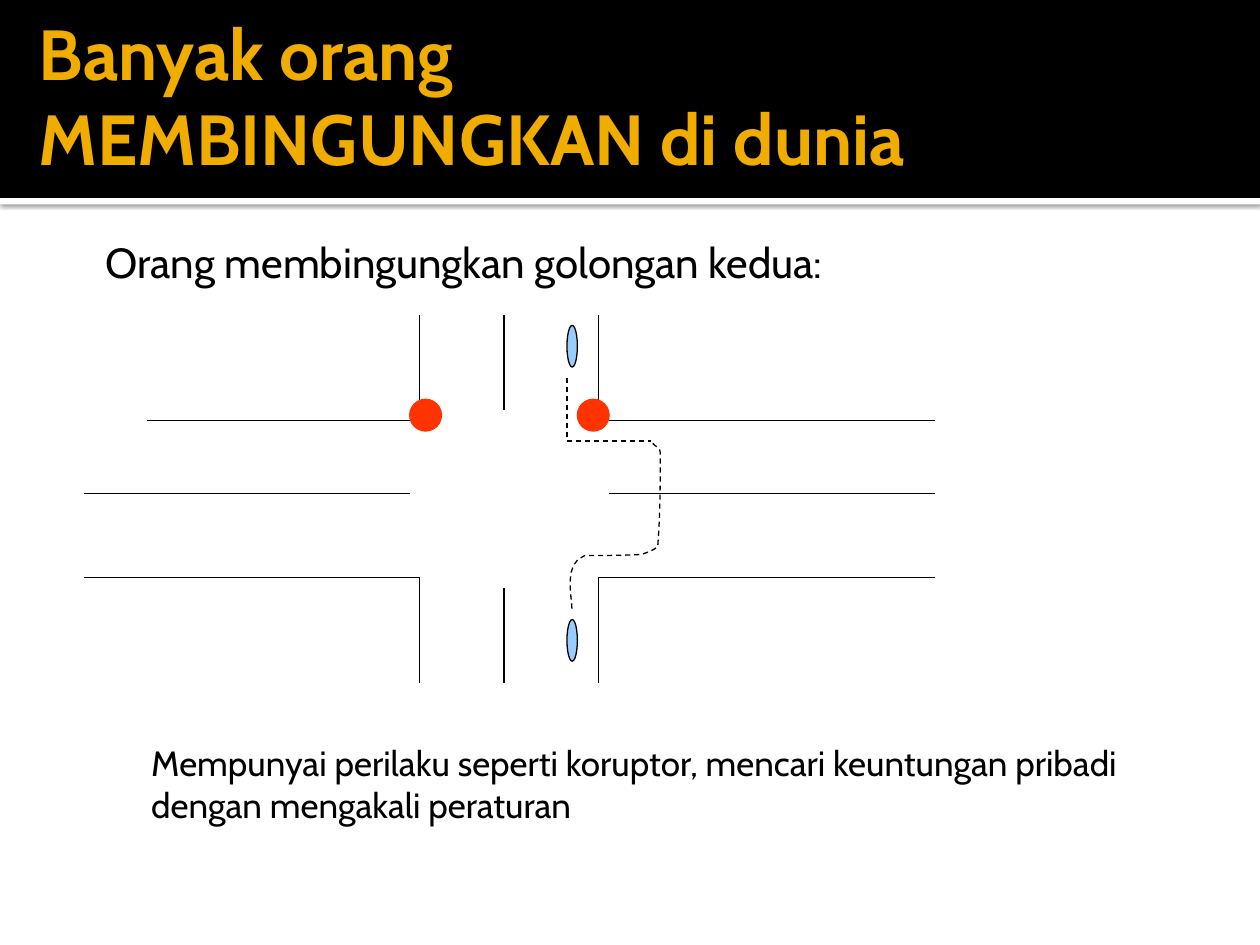
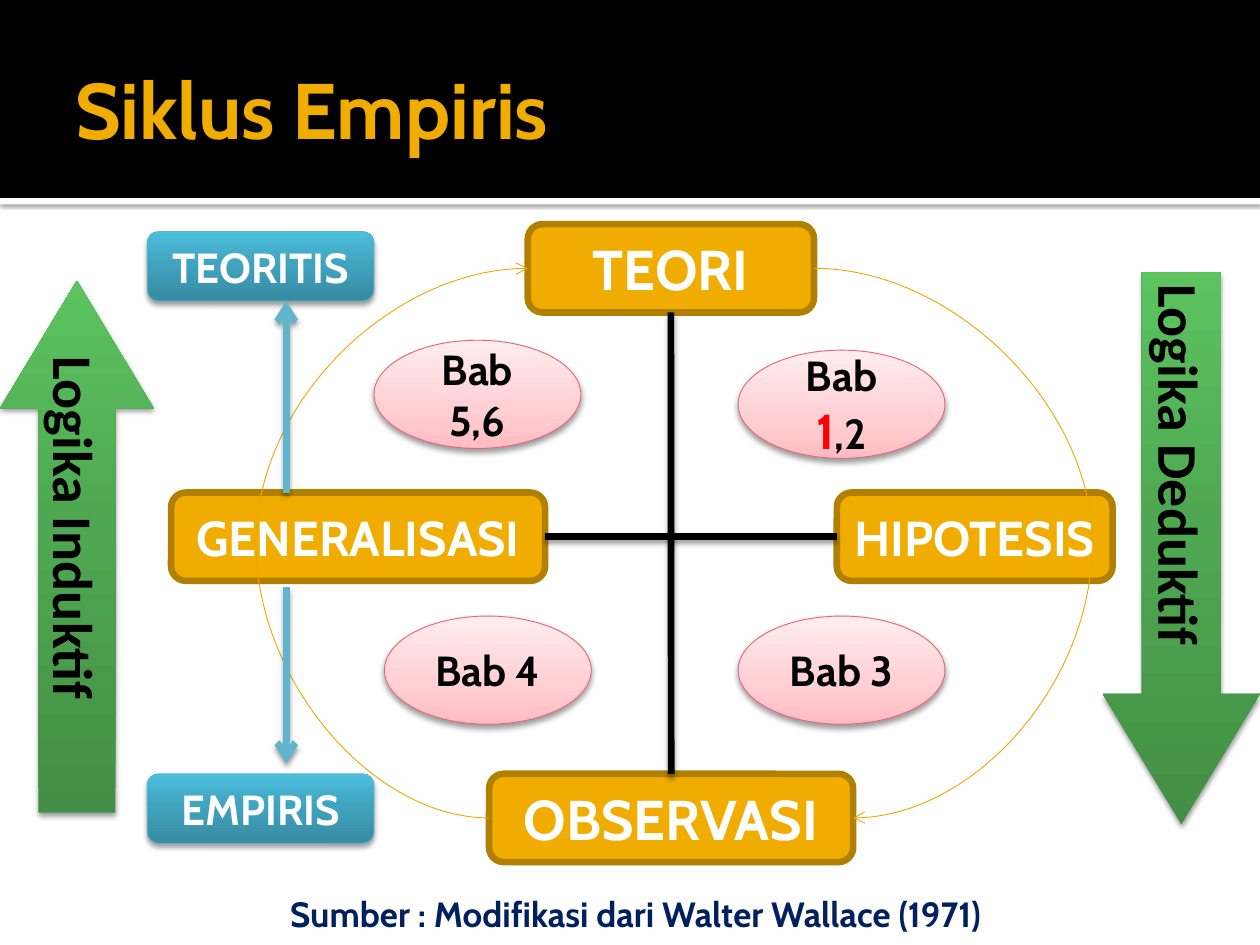
from copy import deepcopy

from lxml import etree
from pptx import Presentation
from pptx.dml.color import RGBColor
from pptx.enum import dml, shapes, text
from pptx.oxml import ns
from pptx.util import Cm, Pt

BLACK = RGBColor(0x00, 0x00, 0x00)
WHITE = RGBColor(0xFF, 0xFF, 0xFF)
GOLD = RGBColor(0xF0, 0xAD, 0x00)
DARK_GOLD = RGBColor(0xB2, 0x80, 0x00)
CURVE_GOLD = RGBColor(0xEB, 0xA9, 0x00)
CAR_BLUE = RGBColor(0x99, 0xCC, 0xFF)
SIGNAL_RED = RGBColor(0xFF, 0x33, 0x00)
RED = RGBColor(0xFF, 0x00, 0x00)
NAVY = RGBColor(0x00, 0x20, 0x60)
TEAL = RGBColor(0x60, 0xB5, 0xCC)
TEAL_EDGE = RGBColor(0x5B, 0xB3, 0xCA)
PINK_EDGE = RGBColor(0xE4, 0x67, 0x78)
TEAL_FADE = [(0, RGBColor(0x37, 0x8B, 0xA2)), (0.55, RGBColor(0x41, 0xA4, 0xBF)),
             (1, RGBColor(0x4B, 0xBF, 0xDE))]
GREEN_FADE = [(0, RGBColor(0x43, 0x8F, 0x45)), (0.55, RGBColor(0x4F, 0xA8, 0x51)),
              (1, RGBColor(0x5C, 0xC3, 0x5F))]
PINK_FADE = [(0, RGBColor(0xFF, 0xBC, 0xC2)), (0.35, RGBColor(0xFF, 0xCF, 0xD3)),
             (1, RGBColor(0xFF, 0xED, 0xEE))]

FONT = "Cabin"
ARROW_FONT = "Calibri"
BAND_SHADOW = (60, 2.5, 0.8)
SOFT_SHADOW = (38, 3.1, 2)
OVAL_SHADOW = (38, 3.5, 2)
THICK = 3.82

RECT = shapes.MSO_SHAPE.RECTANGLE
ROUND = shapes.MSO_SHAPE.ROUNDED_RECTANGLE
OVAL = shapes.MSO_SHAPE.OVAL
LEFT, CENTER = text.PP_ALIGN.LEFT, text.PP_ALIGN.CENTER
TOP, MIDDLE = text.MSO_ANCHOR.TOP, text.MSO_ANCHOR.MIDDLE

BANDS = [((0, 0, 25.4, 3.99), BLACK, None), ((0, 3.99, 25.4, 0.13), WHITE, BAND_SHADOW)]

CROSSING_TITLE = "Banyak orang\vMEMBINGUNGKAN di dunia"
CROSSING_TEXTS = [
    ("Orang membingungkan golongan kedua:", 24, (2.13, 4.76, 20, 1.1)),
    ("Mempunyai perilaku seperti koruptor, mencari keuntungan pribadi "
     "dengan mengakali peraturan", 20, (3.05, 14.94, 20.4, 1.8)),
]
ROAD_LEFT, ROAD_MIDDLE, ROAD_RIGHT = 8.46, 10.16, 12.07
ROAD_UPPER, ROAD_CENTER, ROAD_LOWER = 8.47, 9.95, 11.64
NORTH, SOUTH, WEST, EAST = 6.35, 13.76, 1.7, 18.85
ROAD_LINES = [
    (2.97, ROAD_UPPER, ROAD_LEFT, ROAD_UPPER),
    (ROAD_RIGHT, ROAD_UPPER, EAST, ROAD_UPPER),
    (WEST, ROAD_CENTER, 8.26, ROAD_CENTER),
    (12.27, ROAD_CENTER, EAST, ROAD_CENTER),
    (WEST, ROAD_LOWER, ROAD_LEFT, ROAD_LOWER),
    (ROAD_RIGHT, ROAD_LOWER, EAST, ROAD_LOWER),
    (ROAD_LEFT, NORTH, ROAD_LEFT, ROAD_UPPER),
    (ROAD_LEFT, ROAD_LOWER, ROAD_LEFT, SOUTH),
    (ROAD_RIGHT, NORTH, ROAD_RIGHT, ROAD_UPPER),
    (ROAD_RIGHT, ROAD_LOWER, ROAD_RIGHT, SOUTH),
    (ROAD_MIDDLE, NORTH, ROAD_MIDDLE, 8.26),
    (ROAD_MIDDLE, 11.85, ROAD_MIDDLE, SOUTH),
]
CARS = [(11.43, 6.56), (11.43, 12.49)]
SIGNALS = [(8.26, 8.05), (11.64, 8.05)]
DETOUR_LINES = [(11.43, 7.62, 11.43, 8.89), (11.43, 8.89, 13.13, 8.89)]
DETOUR_START = (13.16, 8.94)
DETOUR_CURVES = [
    ((13.23, 9.02), (13.31, 9.02), (13.31, 9.14)),
    ((13.31, 9.78), (13.31, 10.39), (13.26, 11)),
    ((13.26, 11.07), (12.95, 11.18), (12.9, 11.18)),
    ((12.52, 11.2), (12.14, 11.2), (11.79, 11.2)),
    ((11.35, 11.35), (11.53, 12.01), (11.53, 12.29)),
]

CYCLE_TITLE = "Siklus Empiris"
STAGES = [("TEORI", 32, 10.64, 4.52, 5.77), ("GENERALISASI", 28, 3.45, 9.93, 7.54),
          ("OBSERVASI", 32, 9.86, 15.6, 7.34), ("HIPOTESIS", 28, 16.87, 9.93, 5.56)]
AXES = [("GENERALISASI", 3, "HIPOTESIS", 1), ("TEORI", 2, "OBSERVASI", 0)]
LOGIC_ARROWS = [
    ("Logika Deduktif", shapes.MSO_SHAPE.DOWN_ARROW, (22.23, 5.49, 3.17, 11.13)),
    ("Logika Induktif", shapes.MSO_SHAPE.UP_ARROW, (0, 5.66, 3.1, 10.72)),
]
CYCLE_CURVES = [((16.41, 5.41), (17.2, 16.49), 22.02), ((9.86, 16.49), (10.64, 5.41), 5.16)]
LEVELS = [("TEORITIS", 4.67), ("EMPIRIS", 15.6)]
LEVEL_ARROWS = [(5.77, 9.93, 5.77, 6.07), (5.77, 11.84, 5.77, 15.39)]
CHAPTERS = [
    ([("Bab 5,6", 24, BLACK)], 7.54, 6.86),
    ([("Bab ", 24, BLACK), ("1", 28, RED), (",2", 24, BLACK)], 14.88, 7.06),
    ([("Bab 4", 24, BLACK)], 7.75, 12.42),
    ([("Bab 3", 24, BLACK)], 14.88, 12.42),
]
SOURCE = "Sumber : Modifikasi dari Walter Wallace (1971)"


def cast_shadow(shape, shadow=None):
    effects = etree.SubElement(shape.element.spPr, ns.qn("a:effectLst"))
    if shadow:
        alpha, blur, distance = shadow
        outer = etree.SubElement(effects, ns.qn("a:outerShdw"), blurRad=str(Pt(blur)),
                                 dist=str(Pt(distance)), dir="5400000", rotWithShape="0")
        color = etree.SubElement(outer, ns.qn("a:srgbClr"), val=str(BLACK))
        etree.SubElement(color, ns.qn("a:alpha"), val=str(alpha * 1000))


def paint(shape, fill):
    if isinstance(fill, RGBColor):
        shape.fill.solid()
        shape.fill.fore_color.rgb = fill
        return
    shape.fill.gradient()
    shape.fill.gradient_angle = 90
    stops = shape.element.spPr.find(".//" + ns.qn("a:gsLst"))
    stops.append(deepcopy(stops[0]))
    for stop, (position, color) in zip(shape.fill.gradient_stops, fill):
        stop.position = position
        stop.color.rgb = color


def outline(shape, color, width, dashed=False):
    shape.line.color.rgb = color
    shape.line.width = Pt(width)
    if dashed:
        shape.line.dash_style = dml.MSO_LINE.DASH


def write(frame, runs, align=LEFT, font=FONT, bold=True, **formats):
    for name, value in formats.items():
        setattr(frame, name, value)
    para = frame.paragraphs[0]
    para.alignment = align
    for words, size, color in runs:
        for index, line in enumerate(words.split("\v")):
            if index:
                para.add_line_break()
            span = para.add_run()
            span.text = line
            span.font.color.rgb = color
            for name, value in {"name": font, "size": Pt(size), "bold": bold}.items():
                setattr(span.font, name, value)


def add_figure(page, kind, place, fill, edge=None, shadow=None):
    shape = page.shapes.add_shape(kind, *map(Cm, place))
    paint(shape, fill)
    if edge:
        outline(shape, *edge)
    else:
        shape.line.fill.background()
    cast_shadow(shape, shadow)
    return shape


def add_line(page, ends, color, width, dashed=False, arrow=False, shadow=None,
             kind=shapes.MSO_CONNECTOR.STRAIGHT):
    line = page.shapes.add_connector(kind, *map(Cm, ends))
    outline(line, color, width, dashed)
    if arrow:
        etree.SubElement(line.line._get_or_add_ln(), ns.qn("a:tailEnd"), type="arrow")
    cast_shadow(line, shadow)
    return line


def add_bands(page, layout):
    for place, fill, shadow in BANDS:
        band = add_figure(page, RECT, place, fill, shadow=shadow)
        layout.shapes.element.insert(2, band.element)


def set_title(page, words, size, place):
    title = page.shapes.title
    for name, value in zip(("left", "top", "width", "height"), place):
        setattr(title, name, Cm(value))
    write(title.text_frame, [(words, size, GOLD)], vertical_anchor=MIDDLE,
          auto_size=text.MSO_AUTO_SIZE.NONE, margin_left=Cm(0.25), margin_right=Cm(0.13))


def bezier(start, first, second, end, steps=8):
    for step in range(1, steps + 1):
        t = step / steps
        weights = ((1 - t) ** 3, 3 * t * (1 - t) ** 2, 3 * t * t * (1 - t), t ** 3)
        yield tuple(Cm(sum(w * point[axis] for w, point in
                           zip(weights, (start, first, second, end)))) for axis in (0, 1))


def build_crossing(page):
    set_title(page, CROSSING_TITLE, 40.5, (0.53, 0.64, 22.28, 2.54))
    for words, size, place in CROSSING_TEXTS:
        box = page.shapes.add_textbox(*map(Cm, place))
        write(box.text_frame, [(words, size, BLACK)], bold=False, word_wrap=True,
              margin_left=0, margin_top=0, margin_right=0, margin_bottom=0)
    for ends in ROAD_LINES:
        add_line(page, ends, BLACK, 0.75)
    for spot in SIGNALS:
        add_figure(page, OVAL, (*spot, 0.64, 0.64), SIGNAL_RED, (SIGNAL_RED, 0.75))
    for spot in CARS:
        add_figure(page, OVAL, (*spot, 0.21, 0.84), CAR_BLUE, (BLACK, 0.75))
    for ends in DETOUR_LINES:
        add_line(page, ends, BLACK, 0.75, dashed=True)
    builder = page.shapes.build_freeform(*map(Cm, DETOUR_START))
    start = DETOUR_START
    for curve in DETOUR_CURVES:
        builder.add_line_segments(list(bezier(start, *curve)), close=False)
        start = curve[-1]
    detour = builder.convert_to_shape()
    detour.fill.background()
    outline(detour, BLACK, 0.75, dashed=True)
    cast_shadow(detour)


def build_cycle(page):
    set_title(page, CYCLE_TITLE, 45, (1.27, 0.43, 22.86, 3.48))
    stages = {}
    for words, size, left, top, width in STAGES:
        box = add_figure(page, ROUND, (left, top, width, 1.78), GOLD, (DARK_GOLD, 3.78))
        write(box.text_frame, [(words, size, WHITE)], CENTER, word_wrap=False)
        stages[words] = box
    for begin, begin_side, end, end_side in AXES:
        axis = add_line(page, (0, 0, 1, 1), BLACK, THICK, shadow=SOFT_SHADOW)
        axis.begin_connect(stages[begin], begin_side)
        axis.end_connect(stages[end], end_side)
    for words, kind, place in LOGIC_ARROWS:
        arrow = add_figure(page, kind, place, GREEN_FADE, shadow=SOFT_SHADOW)
        arrow.adjustments[0], arrow.adjustments[1] = 0.5, 0.83
        write(arrow.text_frame, [(words, 32, BLACK)], CENTER, ARROW_FONT, vertical_anchor=TOP)
        arrow.text_frame.paragraphs[0].space_after = Pt(10)
        arrow.element.txBody.find(ns.qn("a:bodyPr")).set("vert", "eaVert")
    for begin, end, bulge in CYCLE_CURVES:
        curve = add_line(page, begin + end, CURVE_GOLD, 0.5, arrow=True,
                         kind=shapes.MSO_CONNECTOR.CURVE)
        ratio = (bulge - begin[0]) / (end[0] - begin[0])
        guides = curve.element.spPr.find(".//" + ns.qn("a:avLst"))
        etree.SubElement(guides, ns.qn("a:gd"), name="adj1", fmla=f"val {round(ratio * 100000)}")
    for words, top in LEVELS:
        box = add_figure(page, ROUND, (2.97, top, 4.57, 1.4), TEAL_FADE, (TEAL_EDGE, 0.5),
                         SOFT_SHADOW)
        write(box.text_frame, [(words, 24, WHITE)], CENTER, word_wrap=False)
    for ends in LEVEL_ARROWS:
        add_line(page, ends, TEAL, THICK, arrow=True, shadow=SOFT_SHADOW)
    for runs, left, top in CHAPTERS:
        oval = add_figure(page, OVAL, (left, top, 4.17, 2.18), PINK_FADE, (PINK_EDGE, 0.5),
                          OVAL_SHADOW)
        write(oval.text_frame, runs, CENTER, word_wrap=True)
    box = page.shapes.add_textbox(*map(Cm, (3.58, 17.86, 18.47, 1.12)))
    write(box.text_frame, [(SOURCE, 20, NAVY)], CENTER, word_wrap=True)


def main():
    deck = Presentation()
    deck.slide_width, deck.slide_height = Cm(25.4), Cm(19.05)
    layout = deck.slide_layouts[5]
    crossing, cycle = (deck.slides.add_slide(layout) for _ in range(2))
    add_bands(crossing, layout)
    build_crossing(crossing)
    build_cycle(cycle)
    deck.save("out.pptx")


if __name__ == "__main__":
    main()
